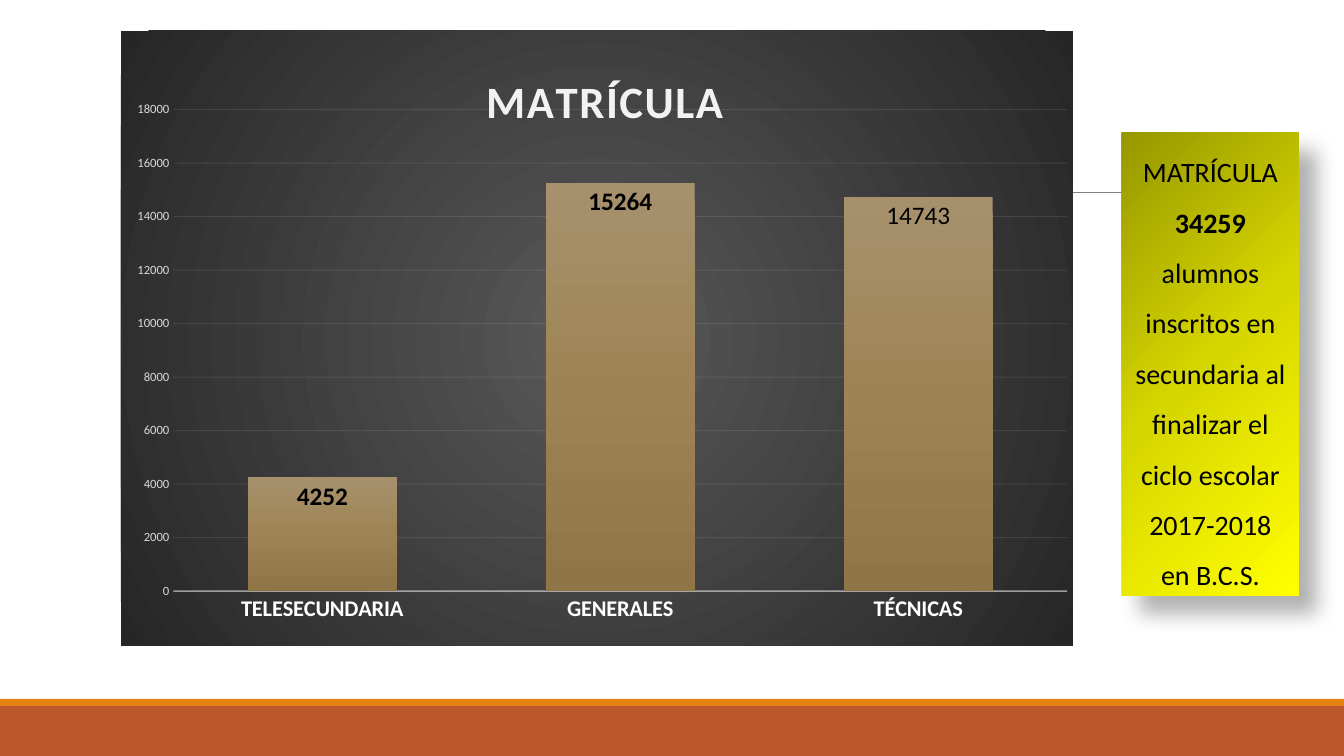
from dataclasses import dataclass

from lxml import etree
from pptx import Presentation
from pptx.chart.data import CategoryChartData
from pptx.dml.color import RGBColor as RGB
from pptx.enum.chart import XL_CHART_TYPE as CHART, XL_LABEL_POSITION as LABEL, XL_TICK_MARK as TICK
from pptx.enum.shapes import MSO_CONNECTOR as CONN, MSO_SHAPE as SHAPE
from pptx.enum.text import MSO_ANCHOR as ANCHOR, MSO_AUTO_SIZE as AUTO, PP_ALIGN as ALIGN
from pptx.oxml import parse_xml
from pptx.oxml.ns import nsdecls, qn
from pptx.util import Pt

TITLE = "MATRÍCULA"
ENROLMENT = [("TELESECUNDARIA", 4252), ("GENERALES", 15264), ("TÉCNICAS", 14743)]
PLAIN_LABEL = 2
CALLOUT = [
    ("MATRÍCULA ", False),
    ("34259", True),
    (" alumnos inscritos en secundaria al finalizar el ciclo escolar 2017-2018 en B.C.S.", False),
]
SLIDE = (1344, 756)
BANDS = [((0, 706, 1344, 50), "BD582C"), ((0, 699, 1344, 7), "E48312")]
RULE = (132, 192, 1231, 192)
CHART_BOX = (121, 31, 952, 615)
PLOT = dict(x=0.055, y=0.128, w=0.939, h=0.783)
TITLE_AT = dict(x=0.375, y=0.05)
CALLOUT_BOX = (1122, 133, 177, 463)


@dataclass(frozen=True)
class Theme:
    font: str = "Calibri"
    black: str = "000000"
    white: str = "FFFFFF"
    pale: str = "F2F2F2"
    tick: str = "D9D9D9"
    rule: str = "808080"
    panel: tuple = ((0, "595959"), (100, "262626"))
    bar: tuple = ((0, "A7916D"), (50, "9E8454"), (100, "907647"))
    note: tuple = ((0, "979700"), (50, "D7D700"), (100, "FFFF00"))
    title_size: int = 32
    note_size: int = 20
    label_size: int = 18
    category_size: int = 16
    tick_size: int = 9


T = Theme()
EMU_PER_PX = 914400 / 100.8


def px(*values):
    return [round(v * EMU_PER_PX) for v in values]


def style(font, size, color, bold=False):
    font.name, font.size, font.bold = T.font, Pt(size), bold
    font.color.rgb = RGB.from_string(color)


def gradient(stops, shade):
    gs = "".join(f'<a:gs pos="{pos * 1000}"><a:srgbClr val="{c}"/></a:gs>' for pos, c in stops)
    return parse_xml(f'<a:gradFill {nsdecls("a")} rotWithShape="1"><a:gsLst>{gs}</a:gsLst>{shade}</a:gradFill>')


def circle(l, t, r, b):
    return (f'<a:path path="circle"><a:fillToRect l="{l * 1000}" t="{t * 1000}" '
            f'r="{r * 1000}" b="{b * 1000}"/></a:path>')


def fill_gradient(fill, element, stops, shade):
    fill.gradient()
    old = next(element.iter(qn("a:gradFill")))
    old.getparent().replace(old, gradient(stops, shade))


def axis_line(line, width, alpha):
    line.color.rgb = RGB.from_string(T.pale)
    line.width = Pt(width)
    color = line.color._xFill.find(qn("a:srgbClr"))
    etree.SubElement(color, qn("a:alpha"), val=str(alpha * 1000))


def place(parent, index, box, inner=False):
    for old in parent.findall(qn("c:layout")):
        parent.remove(old)
    target = '<c:layoutTarget val="inner"/>' if inner else ""
    modes = "".join(f'<c:{k}Mode val="edge"/>' for k in "xy")
    sizes = "".join(f'<c:{k} val="{v}"/>' for k, v in box.items())
    parent.insert(index, parse_xml(
        f'<c:layout {nsdecls("c")}><c:manualLayout>{target}{modes}{sizes}</c:manualLayout></c:layout>'))


def add_backdrop(slide):
    for box, color in BANDS:
        sp = slide.shapes.add_shape(SHAPE.RECTANGLE, *px(*box))
        sp.shadow.inherit = False
        sp.fill.solid()
        sp.fill.fore_color.rgb = RGB.from_string(color)
        sp.line.fill.background()
    rule = slide.shapes.add_connector(CONN.STRAIGHT, *px(*RULE))
    rule.line.color.rgb = RGB.from_string(T.rule)
    rule.line.width = Pt(0.5)
    etree.SubElement(rule._element.spPr, qn("a:effectLst"))


def add_enrolment_chart(slide):
    data = CategoryChartData()
    data.categories = [name for name, _ in ENROLMENT]
    data.add_series(TITLE, [value for _, value in ENROLMENT])
    chart = slide.shapes.add_chart(CHART.COLUMN_CLUSTERED, *px(*CHART_BOX), data).chart
    style(chart.font, 10, T.black)
    chart.has_legend = False

    chart.has_title = True
    p = chart.chart_title.text_frame.paragraphs[0]
    r = p.add_run()
    r.text = TITLE
    style(r.font, T.title_size, T.pale, True)
    r.font._element.set("spc", "100")
    place(chart.chart_title._element, 1, TITLE_AT)

    cat, val = chart.category_axis, chart.value_axis
    for axis in (cat, val):
        axis.major_tick_mark = axis.minor_tick_mark = TICK.NONE
    style(cat.tick_labels.font, T.category_size, T.white, True)
    style(val.tick_labels.font, T.tick_size, T.tick)
    val.minimum_scale, val.maximum_scale, val.major_unit = 0, 18000, 2000
    val.format.line.fill.background()
    axis_line(cat.format.line, 1, 54)
    axis_line(val.major_gridlines.format.line, 0.75, 10)

    plot = chart.plots[0]
    plot.gap_width, plot.overlap, plot.vary_by_categories = 100, -24, False
    series = plot.series[0]
    fill_gradient(series.format.fill, series._element, T.bar, '<a:lin ang="5400000" scaled="0"/>')
    labels = series.data_labels
    labels.show_value = True
    labels.position = LABEL.INSIDE_END
    style(labels.font, T.label_size, T.black, True)
    plain = series.points[PLAIN_LABEL].data_label
    style(plain.font, T.label_size, T.black)
    plain.position = LABEL.INSIDE_END

    space = chart._chartSpace
    place(next(space.iter(qn("c:plotArea"))), 0, PLOT, inner=True)
    panel = parse_xml(f'<c:spPr {nsdecls("c", "a")}><a:ln><a:noFill/></a:ln></c:spPr>')
    panel.insert(0, gradient(T.panel, circle(50, 50, 50, 50)))
    space.find(qn("c:chart")).addnext(panel)


def add_callout(slide):
    sp = slide.shapes.add_shape(SHAPE.RECTANGLE, *px(*CALLOUT_BOX))
    fill_gradient(sp.fill, sp._element.spPr, T.note, circle(0, 0, 100, 100))
    sp.line.fill.background()
    sp.shadow.inherit = False
    sp._element.spPr.find(qn("a:effectLst")).append(parse_xml(
        f'<a:outerShdw {nsdecls("a")} blurRad="{Pt(15)}" dist="{Pt(18)}" dir="2700000" algn="tl" '
        f'rotWithShape="0"><a:srgbClr val="{T.black}"><a:alpha val="30000"/></a:srgbClr></a:outerShdw>'))
    tf = sp.text_frame
    tf.word_wrap, tf.auto_size = True, AUTO.SHAPE_TO_FIT_TEXT
    tf.vertical_anchor = ANCHOR.TOP
    p = tf.paragraphs[0]
    p.alignment, p.line_spacing = ALIGN.CENTER, 1.5
    for text, bold in CALLOUT:
        r = p.add_run()
        r.text = text
        style(r.font, T.note_size, T.black, bold)


def main():
    prs = Presentation()
    prs.slide_width, prs.slide_height = px(*SLIDE)
    slide = prs.slides.add_slide(prs.slide_layouts[6])
    add_backdrop(slide)
    add_enrolment_chart(slide)
    add_callout(slide)
    prs.save("out.pptx")


if __name__ == "__main__":
    main()
